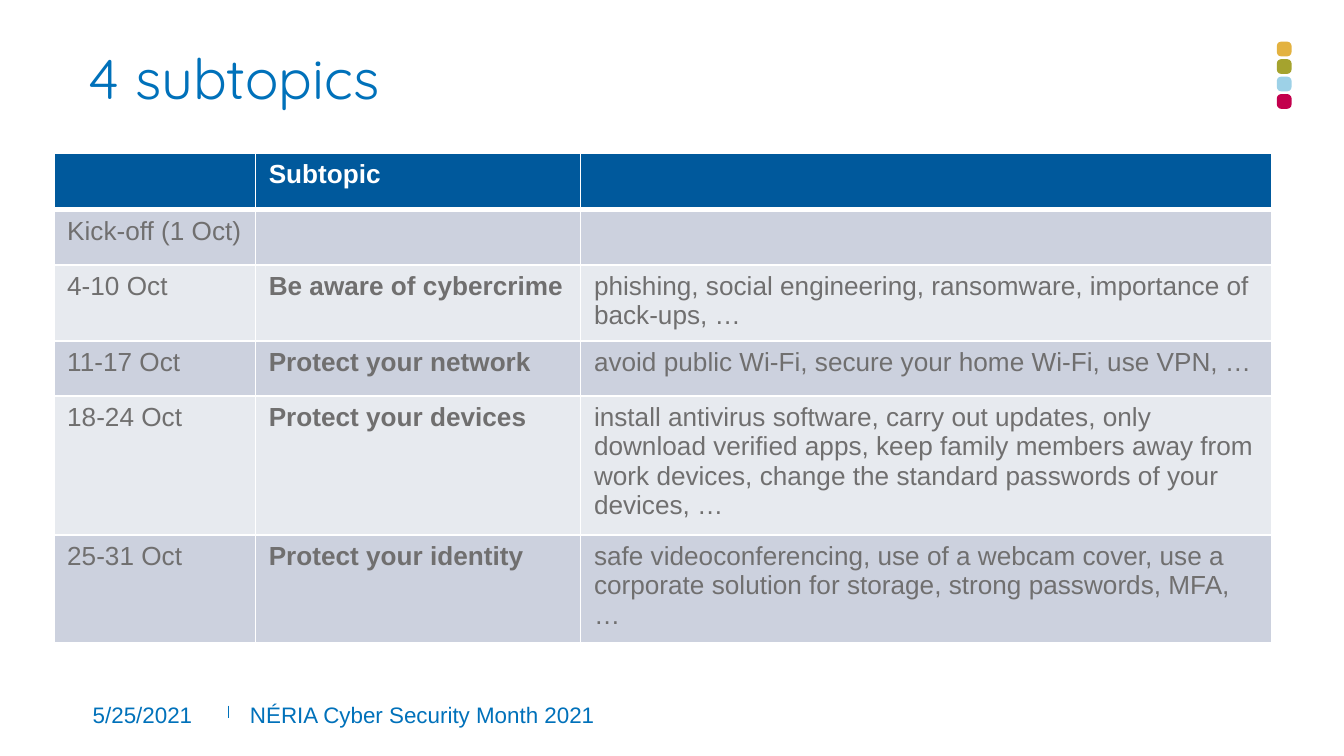
import dataclasses

import pptx
import pptx.dml.color
import pptx.enum.shapes
import pptx.enum.text
import pptx.oxml.ns
import pptx.util
from lxml import etree
from pptx.util import Inches


@dataclasses.dataclass(frozen=True)
class Theme:
    """Colours, fonts and type sizes of the slide."""
    accent: str = "0071BA"
    header: str = "00599C"
    header_text: str = "FFFFFF"
    border: str = "FFFFFF"
    body_text: str = "706F6F"
    bands: tuple = ("CCD1DE", "E7EAEF")
    dots: tuple = ("E3B240", "A5A32E", "9DD1E7", "C3004D")
    title_font: str = "Quicksand"
    body_font: str = "Arial"
    title_size: int = 30
    table_size: int = 14
    footer_size: int = 12


THEME = Theme()
ROWS = [
    ("", "Subtopic", ""),
    ("Kick-off (1 Oct)", "", ""),
    ("4-10 Oct", "Be aware of cybercrime",
     "phishing, social engineering, ransomware, importance of back-ups, …"),
    ("11-17 Oct", "Protect your network",
     "avoid public Wi-Fi, secure your home Wi-Fi, use VPN, …"),
    ("18-24 Oct", "Protect your devices",
     "install antivirus software, carry out updates, only download verified apps, "
     "keep family members away from work devices, change the standard passwords "
     "of your devices, …"),
    ("25-31 Oct", "Protect your identity",
     "safe videoconferencing, use of a webcam cover, use a corporate solution "
     "for storage, strong passwords, MFA, …"),
]


def rgb(value):
    """Return the colour object for a hex value."""
    return pptx.dml.color.RGBColor.from_string(value)


def style_text(frame, font, size, color, bold=False):
    """Format every run of a text frame."""
    for para in frame.paragraphs:
        for span in para.runs:
            span.font.name = font
            span.font.size = pptx.util.Pt(size)
            span.font.color.rgb = rgb(color)
            span.font.bold = bold


def add_text(page, text, left, top, width, height, font, size,
             anchor=pptx.enum.text.MSO_ANCHOR.MIDDLE, spacing=None):
    """Add a text box without margins in the accent colour."""
    box = page.shapes.add_textbox(Inches(left), Inches(top), Inches(width), Inches(height))
    frame = box.text_frame
    frame.margin_left = frame.margin_top = frame.margin_right = frame.margin_bottom = 0
    frame.word_wrap = True
    frame.vertical_anchor = anchor
    frame.text = text
    frame.paragraphs[0].line_spacing = spacing
    style_text(frame, font, size, THEME.accent)


def add_dots(page):
    """Add the column of coloured rounded squares."""
    for index, color in enumerate(THEME.dots):
        dot = page.shapes.add_shape(
            pptx.enum.shapes.MSO_SHAPE.ROUNDED_RECTANGLE,
            Inches(9.5), Inches(0.31 + 0.13 * index), Inches(0.11), Inches(0.11))
        dot.rotation = 90
        dot.adjustments[0] = 0.3
        dot.shadow.inherit = False
        dot.fill.solid()
        dot.fill.fore_color.rgb = rgb(color)
        dot.line.fill.background()


def add_divider(page):
    """Add the short footer divider."""
    line = page.shapes.add_connector(
        pptx.enum.shapes.MSO_CONNECTOR.STRAIGHT,
        Inches(1.7), Inches(5.25), Inches(1.7), Inches(5.34))
    line.line.color.rgb = rgb(THEME.accent)
    line.line.width = pptx.util.Pt(1)
    etree.SubElement(line._element.spPr, pptx.oxml.ns.qn("a:effectLst"))


def set_borders(cell, widths):
    """Draw the cell borders with the given point width per side."""
    properties = cell._tc.get_or_add_tcPr()
    for side, width in widths.items():
        line = etree.SubElement(properties, pptx.oxml.ns.qn(f"a:ln{side}"),
                                w=str(pptx.util.Pt(width)))
        fill = etree.SubElement(line, pptx.oxml.ns.qn("a:solidFill"))
        etree.SubElement(fill, pptx.oxml.ns.qn("a:srgbClr"), val=THEME.border)


def add_schedule(page):
    """Add the table of weeks and subtopics."""
    widths = (1.5, 2.42, 5.14)
    frame = page.shapes.add_table(
        len(ROWS), len(widths), Inches(0.4), Inches(1.14), Inches(sum(widths)), Inches(3.63))
    table = frame.table
    for column, width in zip(table.columns, widths):
        column.width = Inches(width)
    for row, texts in enumerate(ROWS):
        is_header = row == 0
        table.rows[row].height = Inches(0.42 if is_header else 0.41)
        fill = THEME.header if is_header else THEME.bands[(row - 1) % 2]
        color = THEME.header_text if is_header else THEME.body_text
        for column, text in enumerate(texts):
            cell = table.cell(row, column)
            if is_header:
                set_borders(cell, {"L": 1, "R": 1, "T": 1, "B": 3})
            cell.fill.solid()
            cell.fill.fore_color.rgb = rgb(fill)
            if text:
                cell.text_frame.text = text
                style_text(cell.text_frame, THEME.body_font, THEME.table_size,
                           color, is_header or column == 1)
    frame.height = Inches(3.63)


def main():
    """Build and save the slide."""
    deck = pptx.Presentation()
    deck.slide_width = Inches(10)
    deck.slide_height = deck.slide_width * 9 // 16
    page = deck.slides.add_slide(deck.slide_layouts[6])
    add_divider(page)
    add_dots(page)
    add_text(page, "4 subtopics", 0.66, 0.38, 8.62, 0.77, THEME.title_font,
             THEME.title_size, pptx.enum.text.MSO_ANCHOR.TOP, 0.9)
    add_schedule(page)
    for text, left, width in (("5/25/2021", 0.69, 0.94),
                              ("NÉRIA Cyber Security Month 2021", 1.86, 3.38)):
        add_text(page, text, left, 5.21, width, 0.21, THEME.body_font, THEME.footer_size)
    deck.save("out.pptx")


if __name__ == "__main__":
    main()
